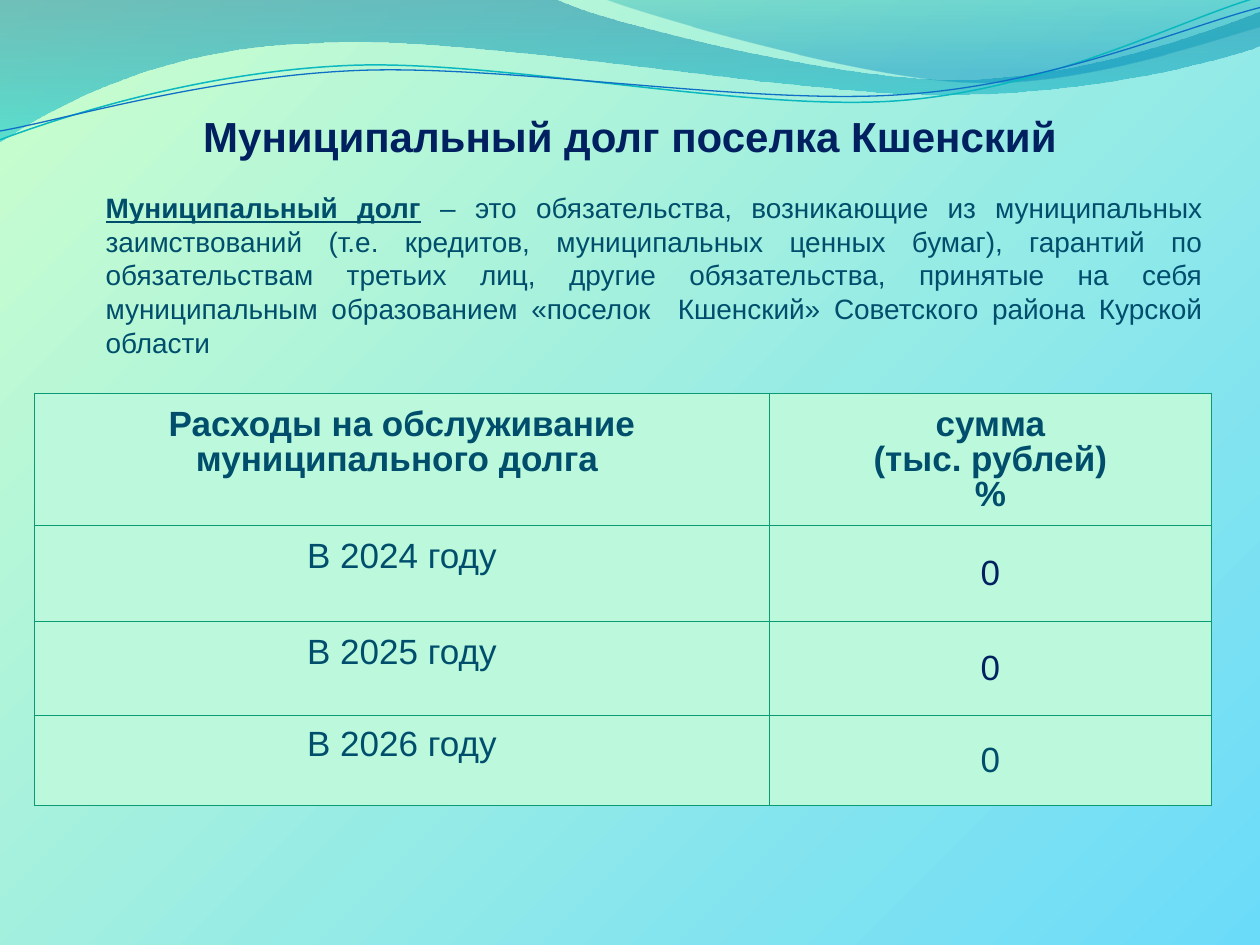
from dataclasses import dataclass

from lxml import etree
from pptx import Presentation
from pptx import util as u
from pptx.dml.color import RGBColor
from pptx.enum import text
from pptx.oxml import parse_xml
from pptx.oxml.ns import nsdecls, qn


@dataclass(frozen=True)
class Theme:
    font: str = "Arial"
    navy: str = "002060"
    ink: str = "004E6C"
    edge: str = "0A9B74"
    cell: str = "BBF8DC"
    sky: str = "6BDBFA"
    mint: str = "CCFFCC"
    head: int = 24
    big: int = 20
    body: int = 16


BAND = ((0, "0074A1", 45), (1, "00C6CF", 55))
VEIL = ((0, "00A1A9", 30), (0.8, "008BBF", 45))
TEAL, BLUE = ("0AB8BF", 0.85), ("0F6FC6", 0.75)

# Waves: a point pair is a straight side, six numbers are a Bezier curve
WAVES = [
    (BAND, None, [
        (0, 0), (44, -0.1), (47.6, 1.7, 66.4, 6.3, 75.8, 6.3),
        (85.3, 6.3, 95.8, 2.6, 100, 0.9), (100.1, 3.6),
        (98.3, 4.4, 87, 7.6, 74.6, 7.5), (62.2, 7.5, 38.2, 2.8, 25.7, 3.4),
        (12.9, 3.6, 4.6, 8.3, -0.1, 11.3)]),
    (VEIL, None, [
        (47.9, -0.1), (50.9, 1.1, 68.2, 6.2, 76.9, 6.5),
        (85.6, 6.9, 96.1, 3.2, 100, 2.1), (100, 0)]),
    (None, TEAL, [
        (0, 11.1), (4.8, 9.3, 15.8, 5.7, 27.7, 5.2),
        (39.5, 4.7, 59.3, 8.9, 71.3, 8), (83.3, 7.1, 93.8, 1.5, 99.8, -0.2)]),
    (None, BLUE, [
        (0, 10.4), (4.7, 9.6, 16.4, 6.1, 28.3, 5.6),
        (40.3, 5.1, 59.7, 8.4, 71.7, 7.5), (83.6, 6.7, 94.1, 2.1, 100, 0.6)]),
]

TITLE = "Муниципальный долг поселка Кшенский"
TERM = "Муниципальный долг"
NOTE = (" – это обязательства, возникающие из муниципальных заимствований "
        "(т.е. кредитов, муниципальных ценных бумаг), гарантий по "
        "обязательствам третьих лиц, другие обязательства, принятые на себя "
        "муниципальным образованием «поселок  Кшенский» Советского района "
        "Курской области")
ROWS = [
    ("Расходы на обслуживание муниципального долга ",
     "сумма\n(тыс. рублей)\n%"),
    ("В 2024 году", "0"),
    ("В 2025 году", "0"),
    ("В 2026 году", "0"),
]


class Deck:
    """Places things on a grid of 100 columns and 75 rows."""

    def __init__(self, theme):
        self.theme = theme
        self.prs = Presentation()
        self.prs.slide_width, self.prs.slide_height = u.Inches(10), u.Inches(7.5)
        self.unit = self.prs.slide_width // 100
        self.slide = self.prs.slides.add_slide(self.prs.slide_layouts[5])

    def span(self, *vals):
        return [u.Emu(round(v * self.unit)) for v in vals]

    def style(self, run, size, color, bold=False):
        font = run.font
        font.name, font.size, font.bold = self.theme.font, u.Pt(size), bold
        font.color.rgb = RGBColor.from_string(color)

    def ground(self, inner, outer):
        fill = self.slide.background.fill
        fill.gradient()
        for stop, color in zip(fill.gradient_stops, (inner, outer)):
            stop.color.rgb = RGBColor.from_string(color)
        grad = self.slide.background._cSld.find(".//" + qn("a:gradFill"))
        grad.replace(grad.find(qn("a:lin")), parse_xml(
            f'<a:path {nsdecls("a")} path="circle">'
            '<a:fillToRect l="100000" t="100000"/></a:path>'))

    def outline(self, steps, close):
        pts = [self.span(*step[i:i + 2])
               for step in steps for i in range(0, len(step), 2)]
        form = self.slide.shapes.build_freeform(*pts[0], scale=1.0)
        form.add_line_segments(pts[1:], close=close)
        shape = form.convert_to_shape()
        # Join each three points of a curve into one Bezier segment
        sides = iter(list(shape._element.iter(qn("a:lnTo"))))
        for step in steps[1:]:
            first = next(sides)
            if len(step) == 6:
                first.tag = qn("a:cubicBezTo")
                for side in (next(sides), next(sides)):
                    first.append(side[0])
                    side.getparent().remove(side)
        return shape

    def wave(self, stops, line, steps):
        shape = self.outline(steps, bool(stops))
        shape.shadow.inherit = False
        if line:
            shape.fill.background()
            shape.line.color.rgb = RGBColor.from_string(line[0])
            shape.line.width = u.Pt(line[1])
            return
        shape.line.fill.background()
        shape.fill.gradient()
        shape.fill.gradient_angle = 270
        for stop, (pos, color, alpha) in zip(shape.fill.gradient_stops, stops):
            stop.position = pos
            stop.color.rgb = RGBColor.from_string(color)
        tags = shape._element.spPr.iter(qn("a:srgbClr"))
        for tag, (pos, color, alpha) in zip(tags, stops):
            etree.SubElement(tag, qn("a:alpha"), val=str(alpha * 1000))

    def title(self, words, box):
        shape = self.slide.shapes.title
        shape.left, shape.top, shape.width, shape.height = self.span(*box)
        frame = shape.text_frame
        frame.text = words
        frame.auto_size = text.MSO_AUTO_SIZE.NONE
        frame.vertical_anchor = text.MSO_ANCHOR.MIDDLE
        para = frame.paragraphs[0]
        para.alignment = text.PP_ALIGN.CENTER
        self.style(para.runs[0], self.theme.head, self.theme.navy, True)
        # Bring the title in front of the waves
        self.slide.shapes._spTree.append(shape._element)

    def note(self, term, words, box):
        frame = self.slide.shapes.add_textbox(*self.span(*box)).text_frame
        frame.word_wrap = True
        para = frame.paragraphs[0]
        para.text = term
        para.alignment = text.PP_ALIGN.JUSTIFY
        para.space_before = u.Pt(8.1)
        para.add_run().text = words
        lead, rest = para.runs
        self.style(lead, self.theme.body, self.theme.ink, True)
        lead.font.underline = True
        self.style(rest, self.theme.body, self.theme.ink)

    def table(self, rows, box, cols, highs):
        grid = self.slide.shapes.add_table(
            len(rows), len(cols), *self.span(*box)).table
        for col, wide in zip(grid.columns, self.span(*cols)):
            col.width = wide
        for row, high in zip(grid.rows, self.span(*highs)):
            row.height = high
        for r, row in enumerate(rows):
            for c, words in enumerate(row):
                self.cell(grid.cell(r, c), words, r, c, r == len(rows) - 1)

    def cell(self, cell, words, r, c, last):
        tone = self.theme.navy if c and r and not last else self.theme.ink
        side, top = (0.4, 0.7) if last else (0.6, 0.9)
        if c == 0:
            top += 0.3
        cell.margin_left = cell.margin_right = cell.margin_bottom = self.span(side)[0]
        cell.margin_top = self.span(top)[0]
        cell.vertical_anchor = text.MSO_ANCHOR.MIDDLE if c else text.MSO_ANCHOR.TOP
        cell.text_frame.text = words
        for para in cell.text_frame.paragraphs:
            para.alignment = text.PP_ALIGN.CENTER
            para.line_spacing = 0.9
            self.style(para.runs[0], self.theme.big, tone, r == 0)
        # Borders come before the fill in the cell's properties
        props = cell._tc.get_or_add_tcPr()
        for edge in ("lnL", "lnR", "lnT", "lnB"):
            props.append(parse_xml(
                f'<a:{edge} {nsdecls("a")} w="{u.Pt(0.75)}"><a:solidFill>'
                f'<a:srgbClr val="{self.theme.edge}"/></a:solidFill></a:{edge}>'))
        cell.fill.solid()
        cell.fill.fore_color.rgb = RGBColor.from_string(self.theme.cell)


def main():
    theme = Theme()
    deck = Deck(theme)
    # Backdrop
    deck.ground(theme.sky, theme.mint)
    for wave in WAVES:
        deck.wave(*wave)
    # Heading and definition
    deck.title(TITLE, (4.1, 6.9, 91.8, 7.8))
    deck.note(TERM, NOTE, (7.4, 14.65, 89.05, 14.5))
    # Debt service costs by year
    deck.table(ROWS, (2.75, 31.2, 93.4, 32.7), (58.3, 35.1),
               (10.5, 7.6, 7.5, 7.1))
    deck.prs.save("out.pptx")


if __name__ == "__main__":
    main()
